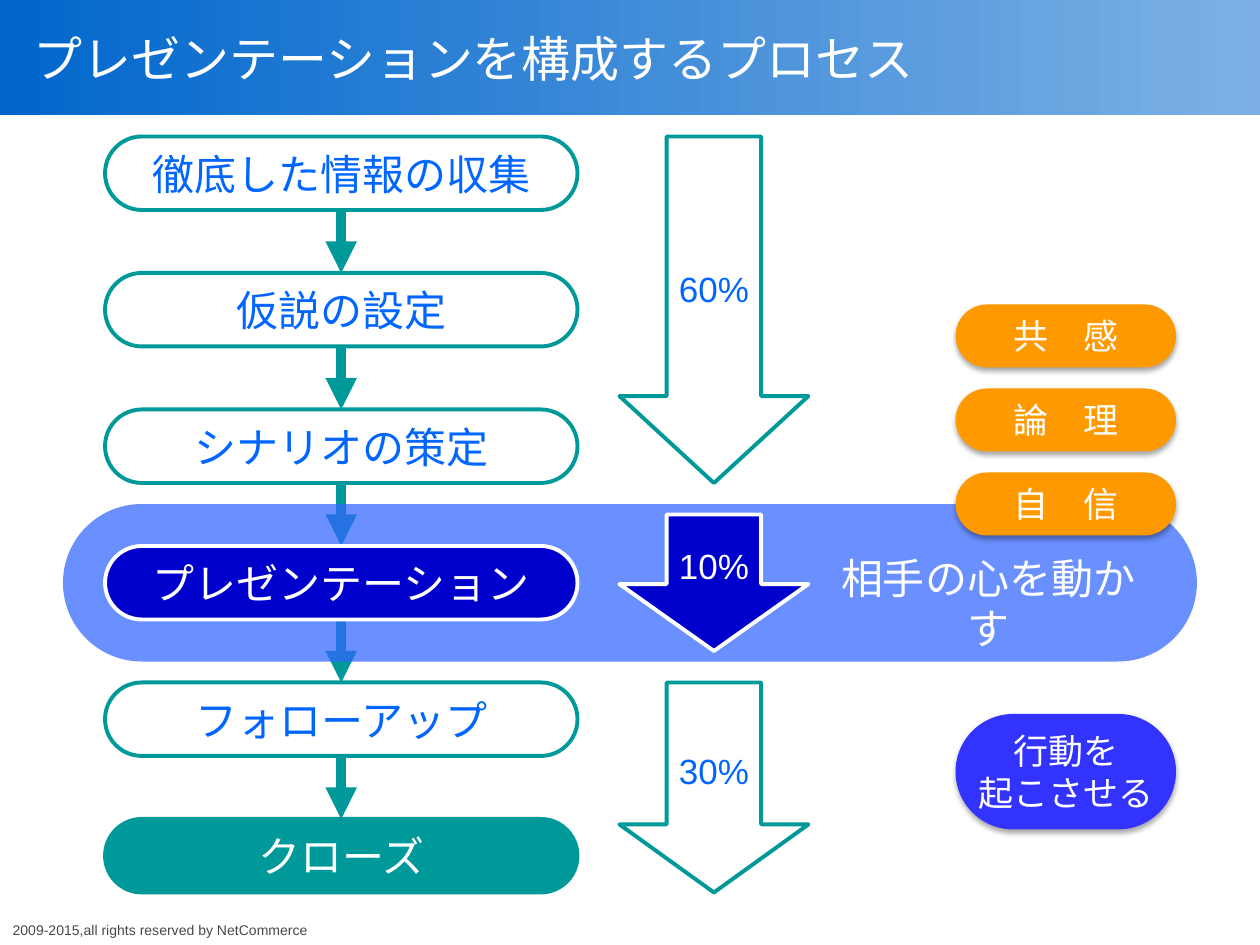
"""Builds a slide on the process that makes up a presentation."""
from lxml import etree
from pptx import Presentation
from pptx.dml.color import RGBColor
from pptx.enum.shapes import MSO_CONNECTOR, MSO_SHAPE
from pptx.enum.text import MSO_ANCHOR, PP_ALIGN
from pptx.oxml.ns import qn
from pptx.util import Pt

PX = 7620
ROUND, DOWN, RECT = MSO_SHAPE.ROUNDED_RECTANGLE, MSO_SHAPE.DOWN_ARROW, MSO_SHAPE.RECTANGLE
STRAIGHT = MSO_CONNECTOR.STRAIGHT
MIDDLE, TOP = MSO_ANCHOR.MIDDLE, MSO_ANCHOR.TOP
LEFT, CENTER = PP_ALIGN.LEFT, PP_ALIGN.CENTER

WHITE = RGBColor(0xFF, 0xFF, 0xFF)
TEAL = RGBColor(0x00, 0x99, 0x99)
BLUE = RGBColor(0x00, 0x66, 0xFF)
NAVY = RGBColor(0x00, 0x00, 0xCC)
VIOLET = RGBColor(0x33, 0x33, 0xFF)
BAND = RGBColor(0x33, 0x66, 0xFF)
ORANGE = RGBColor(0xFF, 0x99, 0x00)
GRAY = RGBColor(0x48, 0x48, 0x48)
SKY = RGBColor(0x00, 0x66, 0xCC), RGBColor(0x7D, 0xB1, 0xE5)

STEPS = [
    ("徹底した情報の収集", WHITE, TEAL, BLUE),
    ("仮説の設定", WHITE, TEAL, BLUE),
    ("シナリオの策定", WHITE, TEAL, BLUE),
    ("プレゼンテーション", NAVY, WHITE, WHITE),
    ("フォローアップ", WHITE, TEAL, BLUE),
    ("クローズ", TEAL, TEAL, WHITE),
]
SHARES = [
    ("60%", 130, 330, (0.5, 0.46), WHITE, TEAL, BLUE),
    ("10%", 490, 130, (0.5, 0.49), NAVY, WHITE, WHITE),
    ("30%", 650, 200, (0.5, 0.36), WHITE, TEAL, BLUE),
]
CHIPS = [
    ("共　感", 290, 60, ORANGE),
    ("論　理", 370, 60, ORANGE),
    ("自　信", 450, 60, ORANGE),
    ("行動を\n起こさせる", 680, 110, VIOLET),
]
TOP_Y, STEP, PILL_H = 130, 130, 70


class Deck:
    """Holds the style and the current slide."""

    def __init__(self, font):
        self.font = font
        self.prs = Presentation()
        self.prs.slide_width, self.prs.slide_height = 1200 * PX, 900 * PX
        self.slide = self.prs.slides.add_slide(self.prs.slide_layouts[5])
        self.shapes = self.slide.shapes

    def letter(self, shape, text, size, color, align=CENTER, anchor=MIDDLE, wrap=False):
        """Fills a shape with styled text."""
        frame = shape.text_frame
        frame.text = text
        frame.word_wrap = wrap
        frame.vertical_anchor = anchor
        for para in frame.paragraphs:
            para.alignment = align
            para.font.name = self.font
            para.font.size = Pt(size)
            para.font.color.rgb = color

    def title(self, text, *box):
        """Moves and fills the title placeholder."""
        title = self.shapes.title
        title.left, title.top, title.width, title.height = (n * PX for n in box)
        self.letter(title, text, 28, WHITE, LEFT, wrap=True)

    def shape(self, kind, box, fill=None, line=None, adjust=()):
        """Adds a flat preset shape."""
        shape = self.shapes.add_shape(kind, *(n * PX for n in box))
        shape.shadow.inherit = False
        for i, value in enumerate(adjust):
            shape.adjustments[i] = value
        if fill is not None:
            shape.fill.solid()
            shape.fill.fore_color.rgb = fill
        if line is None:
            shape.line.fill.background()
        else:
            shape.line.color.rgb = line
            shape.line.width = Pt(2.25)
        return shape

    def pill(self, box, fill, line=None):
        """Adds a fully rounded box."""
        return self.shape(ROUND, box, fill, line, (0.5,))

    def banner(self, *box):
        """Adds a gradient strip behind the title."""
        strip = self.shape(RECT, box)
        strip.fill.gradient()
        strip.fill.gradient_angle = 0
        for i, (stop, color) in enumerate(zip(strip.fill.gradient_stops, SKY)):
            stop.position = i
            stop.color.rgb = color
        self.shapes.title._element.addprevious(strip._element)

    def band(self, *box):
        """Adds a see-through rounded band."""
        band = self.pill(box, BAND)
        color = band._element.spPr.find(qn("a:solidFill"))[0]
        etree.SubElement(color, qn("a:alpha"), val="73000")

    def chip(self, text, box, fill):
        """Adds a rounded label with a soft shadow."""
        chip = self.pill(box, fill)
        effects = chip._element.spPr.find(qn("a:effectLst"))
        shade = etree.SubElement(effects, qn("a:outerShdw"), blurRad="40000",
                                 dist="23000", dir="5400000", rotWithShape="0")
        black = etree.SubElement(shade, qn("a:srgbClr"), val="000000")
        etree.SubElement(black, qn("a:alpha"), val="35000")
        self.letter(chip, text, 20, WHITE)

    def link(self, x, start, end):
        """Adds a thick downward arrow line."""
        link = self.shapes.add_connector(STRAIGHT, x * PX, start * PX, x * PX, end * PX)
        link.line.width = Pt(6)
        link.line.color.rgb = TEAL
        props = link._element.spPr
        etree.SubElement(props.find(qn("a:ln")), qn("a:tailEnd"), type="triangle")
        etree.SubElement(props, qn("a:effectLst"))
        return link

    def label(self, text, box, size, color, align, wrap=False):
        """Adds a text box without margins."""
        label = self.shapes.add_textbox(*(n * PX for n in box))
        frame = label.text_frame
        frame.margin_left = frame.margin_right = frame.margin_top = frame.margin_bottom = 0
        self.letter(label, text, size, color, align, TOP, wrap)


def main():
    """Draws the slide and saves it."""
    deck = Deck("Arial")
    deck.title("プレゼンテーションを構成するプロセス", 20, 20, 1080, 70)
    deck.banner(0, 0, 1200, 110)
    deck.label("2009-2015,all rights reserved by NetCommerce",
               (12, 878, 296, 17), 8, GRAY, LEFT)

    tops = [TOP_Y + STEP * i for i in range(len(STEPS))]
    links = [deck.link(325, y + PILL_H, y + STEP) for y in tops[:-1]]
    deck.band(60, 480, 1080, 150)
    deck.label("相手の心を動かす", (790, 526, 302, 96), 24, WHITE, CENTER, True)

    pills = []
    for y, (text, fill, line, color) in zip(tops, STEPS):
        pill = deck.pill((100, y, 450, PILL_H), fill, line)
        deck.letter(pill, text, 24, color)
        pills.append(pill)
    for link, first, last in zip(links, pills, pills[1:]):
        link.begin_connect(first, 2)
        link.end_connect(last, 0)

    for text, y, high, adjust, fill, line, color in SHARES:
        arrow = deck.shape(DOWN, (590, y, 180, high), fill, line, adjust)
        deck.letter(arrow, text, 20, color)
    for text, y, high, fill in CHIPS:
        deck.chip(text, (910, y, 210, high), fill)
    deck.prs.save("out.pptx")


if __name__ == "__main__":
    main()
